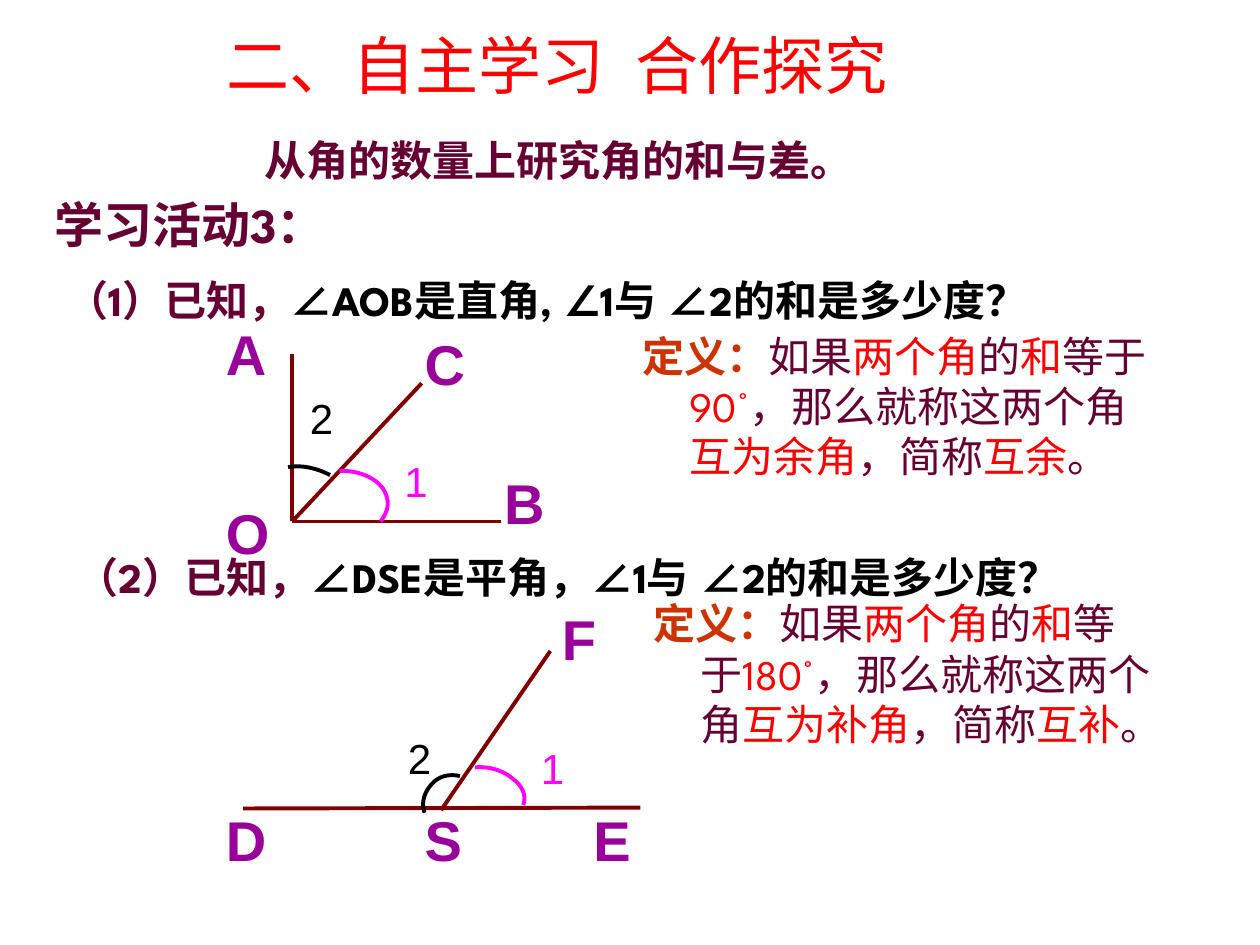
from dataclasses import dataclass

from lxml.etree import SubElement
from pptx import Presentation
from pptx.dml.color import RGBColor
from pptx.enum.shapes import MSO_CONNECTOR
from pptx.enum.text import MSO_ANCHOR, MSO_AUTO_SIZE, PP_ALIGN
from pptx.oxml.ns import qn
from pptx.util import Pt

SPARTAN, SANS, ARIAL = "League Spartan", "Noto Sans CJK SC", "Arial"
PLUM, RED, RUST, BLACK = "660033", "FF0000", "CC3300", "000000"
MAROON, PURPLE, MAGENTA = "800000", "990099", "FF00FF"
LINE_WIDTH = 2.25
HANGING = 27
CURVE_STEPS = 12

Point = tuple[float, float]


@dataclass
class Span:
    text: str
    color: str
    size: float = 24
    bold: bool = False
    font: str = SPARTAN


@dataclass
class TextBlock:
    left: float
    top: float
    width: float
    height: float
    spans: list[Span]
    anchor: MSO_ANCHOR = MSO_ANCHOR.MIDDLE
    hanging: float = 0


@dataclass
class Segment:
    start: Point
    end: Point


@dataclass
class Arc:
    """Cubic Bezier chain: a start point, then three points per curve."""
    points: list[Point]
    color: str


def rgb(color: str) -> RGBColor:
    return RGBColor.from_string(color)


def fill_text(box, block: TextBlock) -> None:
    frame = box.text_frame
    frame_format = {"word_wrap": True, "auto_size": MSO_AUTO_SIZE.NONE,
                    "vertical_anchor": block.anchor}
    for name, value in frame_format.items():
        setattr(frame, name, value)
    para = frame.paragraphs[0]
    properties = para._p.get_or_add_pPr()
    properties.set("marL", str(Pt(block.hanging)))
    properties.set("indent", str(-Pt(block.hanging)))
    SubElement(properties, qn("a:buNone"))
    para.alignment = PP_ALIGN.LEFT
    para.space_before = Pt(0)
    for item in block.spans:
        span = para.add_run()
        span.text = item.text
        span.font.color.rgb = rgb(item.color)
        span_format = {"size": Pt(item.size), "bold": item.bold, "name": item.font}
        for name, value in span_format.items():
            setattr(span.font, name, value)
        SubElement(span._r.get_or_add_rPr(), qn("a:ea"), typeface=item.font)


def fill_placeholder(box, block: TextBlock) -> None:
    for name in ("left", "top", "width", "height"):
        setattr(box, name, Pt(getattr(block, name)))
    fill_text(box, block)


def add_text(page, block: TextBlock) -> None:
    box = page.shapes.add_textbox(Pt(block.left), Pt(block.top),
                                  Pt(block.width), Pt(block.height))
    fill_text(box, block)


def style_line(line, color: str) -> None:
    line.color.rgb = rgb(color)
    line.width = Pt(LINE_WIDTH)


def add_segment(page, segment: Segment) -> None:
    ends = [Pt(value) for value in (*segment.start, *segment.end)]
    connector = page.shapes.add_connector(MSO_CONNECTOR.STRAIGHT, *ends)
    style_line(connector.line, MAROON)
    SubElement(connector._element.spPr, qn("a:effectLst"))


def curve_point(controls: list[Point], t: float) -> Point:
    weights = ((1 - t) ** 3, 3 * t * (1 - t) ** 2, 3 * t ** 2 * (1 - t), t ** 3)
    x, y = (sum(w * p[axis] for w, p in zip(weights, controls)) for axis in (0, 1))
    return Pt(x), Pt(y)


def add_arc(page, arc: Arc) -> None:
    x, y = arc.points[0]
    builder = page.shapes.build_freeform(Pt(x), Pt(y))
    vertices = [curve_point(arc.points[first:first + 4], step / CURVE_STEPS)
                for first in range(0, len(arc.points) - 1, 3)
                for step in range(1, CURVE_STEPS + 1)]
    builder.add_line_segments(vertices, close=False)
    shape = builder.convert_to_shape()
    shape.shadow.inherit = False
    shape.fill.background()
    style_line(shape.line, arc.color)


def definition(left: float, top: float, width: float, height: float,
               degrees: str, relation: str, short_name: str) -> TextBlock:
    parts = [("如果", PLUM), ("两个角", RED), ("的", PLUM), ("和", RED),
             ("等于", PLUM), (degrees, RED), ("，那么就称这两个角", PLUM),
             (relation, RED), ("，简称", PLUM), (short_name, RED), ("。", PLUM)]
    spans = [Span("定义：", RUST, bold=True)]
    spans += [Span(text, color) for text, color in parts]
    return TextBlock(left, top, width, height, spans, MSO_ANCHOR.TOP, HANGING)


def question(left: float, top: float, width: float,
             opening: str, body: str) -> TextBlock:
    spans = [Span(opening, PLUM, bold=True), Span(body, BLACK, bold=True)]
    return TextBlock(left, top, width, 51, spans)


def vertex_label(text: str, left: float, top: float) -> TextBlock:
    return TextBlock(left, top, 40, 45, [Span(text, PURPLE, 32, True, ARIAL)],
                     MSO_ANCHOR.TOP)


def angle_label(text: str, left: float, top: float, color: str) -> TextBlock:
    return TextBlock(left, top, 28, 36, [Span(text, color, font=ARIAL)],
                     MSO_ANCHOR.TOP)


TITLE = TextBlock(122, 0, 420, 73, [Span("二、自主学习  合作探究", RED, 36)])
DEFINITIONS = [
    definition(360, 185, 306, 108, "90°", "互为余角", "互余"),
    definition(366, 338, 300, 162, "180°", "互为补角", "互补"),
]
TEXTS = [
    TextBlock(24, 108, 261, 40, [Span("学习活动3：", PLUM, 28, True)]),
    TextBlock(144, 69, 384, 45,
              [Span("从角的数量上研究角的和与差。", PLUM, bold=True, font=SANS)]),
    question(31, 145.5, 669, "（1）已知，", "∠AOB是直角, ∠1与 ∠2的和是多少度？"),
    question(36.5, 304, 612, "（2）已知，", "∠DSE是平角，∠1与 ∠2的和是多少度？"),
    vertex_label("A", 122, 179),
    vertex_label("B", 281, 264),
    vertex_label("O", 122, 281.5),
    vertex_label("C", 235.5, 185),
    vertex_label("D", 122, 456.5),
    vertex_label("S", 235.5, 456.5),
    vertex_label("E", 332, 457),
    vertex_label("F", 314, 342),
    angle_label("2", 170, 221, BLACK),
    angle_label("1", 224, 257, MAGENTA),
    angle_label("2", 226, 415, BLACK),
    angle_label("1", 302, 420.5, MAGENTA),
]
POINT_O, POINT_S = (167, 298), (252, 463)
SEGMENTS = [
    Segment((167, 202.5), POINT_O),
    Segment((286.5, 298), POINT_O),
    Segment((241, 219), POINT_O),
    Segment((314.5, 372), POINT_S),
    Segment((366, 461.5), (139, 462)),
]
ARCS = [
    Arc([(188.6, 271.5), (181, 267.5), (172, 265.5), (164.6, 267)], BLACK),
    Arc([(194, 269.2), (204.5, 268.6), (214.6, 273), (219, 279.4),
         (223.2, 286.6), (222, 292), (217.5, 298)], MAGENTA),
    Arc([(262.8, 443.5), (257, 442), (250.6, 443.5), (247, 447.8),
         (242.6, 452.2), (240.5, 458.6), (242.6, 464.4)], BLACK),
    Arc([(271.4, 438.5), (280, 437.8), (288, 440.6), (293, 445),
         (298.8, 449.3), (301, 455), (299, 460)], MAGENTA),
]


def main() -> None:
    deck = Presentation()
    deck.slide_width, deck.slide_height = Pt(720), Pt(540)
    page = deck.slides.add_slide(deck.slide_layouts.get_by_name("Two Content"))
    title, *bodies = list(page.placeholders)[:3]
    fill_placeholder(title, TITLE)
    for box, block in zip(bodies, DEFINITIONS):
        fill_placeholder(box, block)
    for segment in SEGMENTS:
        add_segment(page, segment)
    for arc in ARCS:
        add_arc(page, arc)
    for block in TEXTS:
        add_text(page, block)
    deck.save("out.pptx")


if __name__ == "__main__":
    main()
